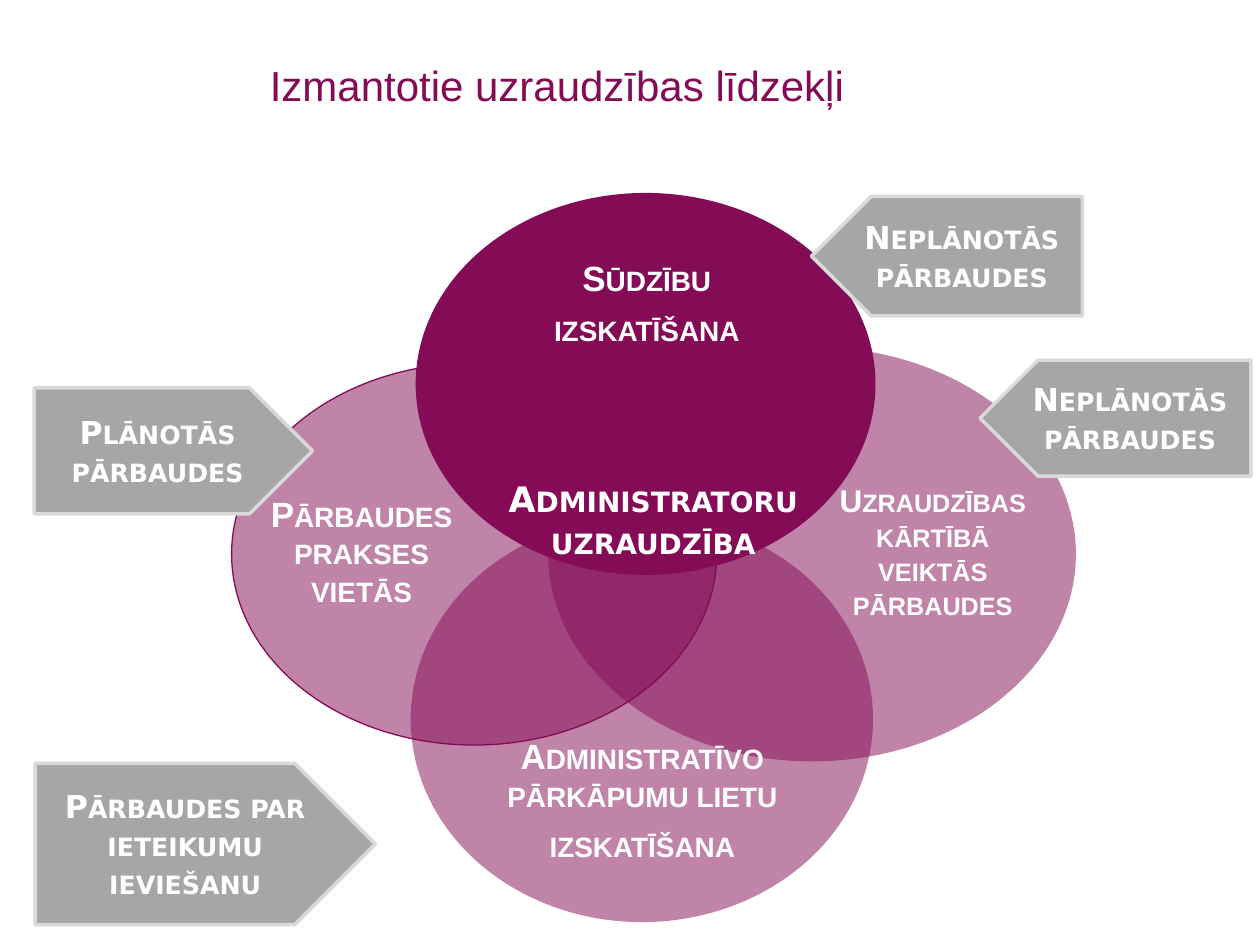
from pptx import Presentation
from pptx.dml.color import RGBColor
from pptx.enum.shapes import MSO_SHAPE as Shape
from pptx.enum.text import MSO_ANCHOR as Anchor, PP_ALIGN as Align
from pptx.oxml.ns import qn
from pptx.util import Cm, Pt
from lxml.etree import SubElement

COLORS = {"plum": "840B55", "gray": "A6A6A6", "border": "D9D9D9", "white": "FFFFFF"}


def color(name):
    return RGBColor.from_string(COLORS[name])


def write_text(frame, *lines, size=20, font="Arial", ink="white", bold=True,
               small_caps=True, anchor=Anchor.MIDDLE, margin=None, spacing=None, after=None):
    """Fill a text frame with one centred paragraph per line."""
    frame.word_wrap = True
    frame.vertical_anchor = anchor
    if margin is not None:
        frame.margin_left = frame.margin_right = margin
        frame.margin_top = frame.margin_bottom = margin
    for index, line in enumerate(lines):
        paragraph = frame.paragraphs[0] if index == 0 else frame.add_paragraph()
        paragraph.alignment = Align.CENTER
        paragraph.line_spacing = spacing
        paragraph.space_after = after
        run = paragraph.add_run()
        run.text = line
        run.font.size = Pt(size)
        run.font.name = font
        run.font.bold = bold
        run.font.color.rgb = color(ink)
        if small_caps:
            run.font._element.set("cap", "small")


presentation = Presentation()
presentation.slide_width, presentation.slide_height = Cm(25.4), Cm(19.05)
slide = presentation.slides.add_slide(presentation.slide_layouts[5])

title = slide.shapes.title
title.left, title.top, title.width, title.height = Cm(4.9), Cm(1.07), Cm(19.23), Cm(2.87)
write_text(title.text_frame, "Izmantotie uzraudzības līdzekļi", size=24, ink="plum",
           bold=False, small_caps=False, anchor=Anchor.TOP)
title.text_frame.margin_right = Cm(6.83)

# Ellipse box, label box, label lines, text size, opacity in percent, outlined
ellipses = [
    ((8.38, 3.89, 9.27, 7.7), (9.47, 4.93, 7.14, 2.44),
     ["Sūdzību", "izskatīšana"], 20, 100, False),
    ((11.05, 6.99, 10.64, 8.36), (16.76, 7.95, 4.09, 6.43),
     ["Uzraudzības kārtībā veiktās pārbaudes"], 18, 50, False),
    ((8.28, 10.41, 9.32, 8.18), (9.37, 14.88, 7.16, 2.59),
     ["Administratīvo pārkāpumu lietu", "izskatīšana"], 20, 50, False),
    ((4.67, 7.32, 9.78, 7.7), (5.41, 8.2, 3.76, 5.92),
     ["Pārbaudes prakses vietās"], 20, 50, True),
]
venn = slide.shapes.add_group_shape()
for box, label_box, lines, size, opacity, outlined in ellipses:
    ellipse = venn.shapes.add_shape(Shape.OVAL, *map(Cm, box))
    ellipse.shadow.inherit = False
    ellipse.fill.solid()
    ellipse.fill.fore_color.rgb = color("plum")
    if opacity < 100:
        fill_color = ellipse._element.spPr.find(f"{qn('a:solidFill')}/{qn('a:srgbClr')}")
        SubElement(fill_color, qn("a:alpha"), val=str(opacity * 1000))
    if outlined:
        ellipse.line.color.rgb = color("plum")
        ellipse.line.width = Pt(0.75)
    else:
        ellipse.line.fill.background()
    label = venn.shapes.add_textbox(*map(Cm, label_box))
    write_text(label.text_frame, *lines, size=size, margin=0, spacing=0.9, after=Pt(7))

center_label = venn.shapes.add_textbox(Cm(9.27), Cm(9.5), Cm(7.8), Cm(1.96))
write_text(center_label.text_frame, "Administratoru uzraudzība",
           font="DejaVu Sans", anchor=Anchor.TOP)

# Arrow box, text, points left; the last arrow stands outside the group
arrows = [
    ((16.36, 3.96, 5.46, 2.41), "Neplānotās pārbaudes", True),
    ((19.76, 7.26, 5.46, 2.34), "Neplānotās pārbaudes", True),
    ((0.69, 7.82, 5.61, 2.54), "Plānotās pārbaudes", False),
    ((0.71, 15.39, 6.86, 3.25), "Pārbaudes par ieteikumu ieviešanu", False),
]
arrow_group = slide.shapes.add_group_shape()
for index, (box, text, points_left) in enumerate(arrows):
    parent = arrow_group if index < 3 else slide
    arrow = parent.shapes.add_shape(Shape.PENTAGON, *map(Cm, box))
    arrow.shadow.inherit = False
    arrow.fill.solid()
    arrow.fill.fore_color.rgb = color("gray")
    arrow.line.color.rgb = color("border")
    arrow.line.width = Pt(2)
    if points_left:
        arrow._element.spPr.find(qn("a:xfrm")).set("flipH", "1")
    write_text(arrow.text_frame, text, size=18, font="DejaVu Sans")

presentation.save("out.pptx")
